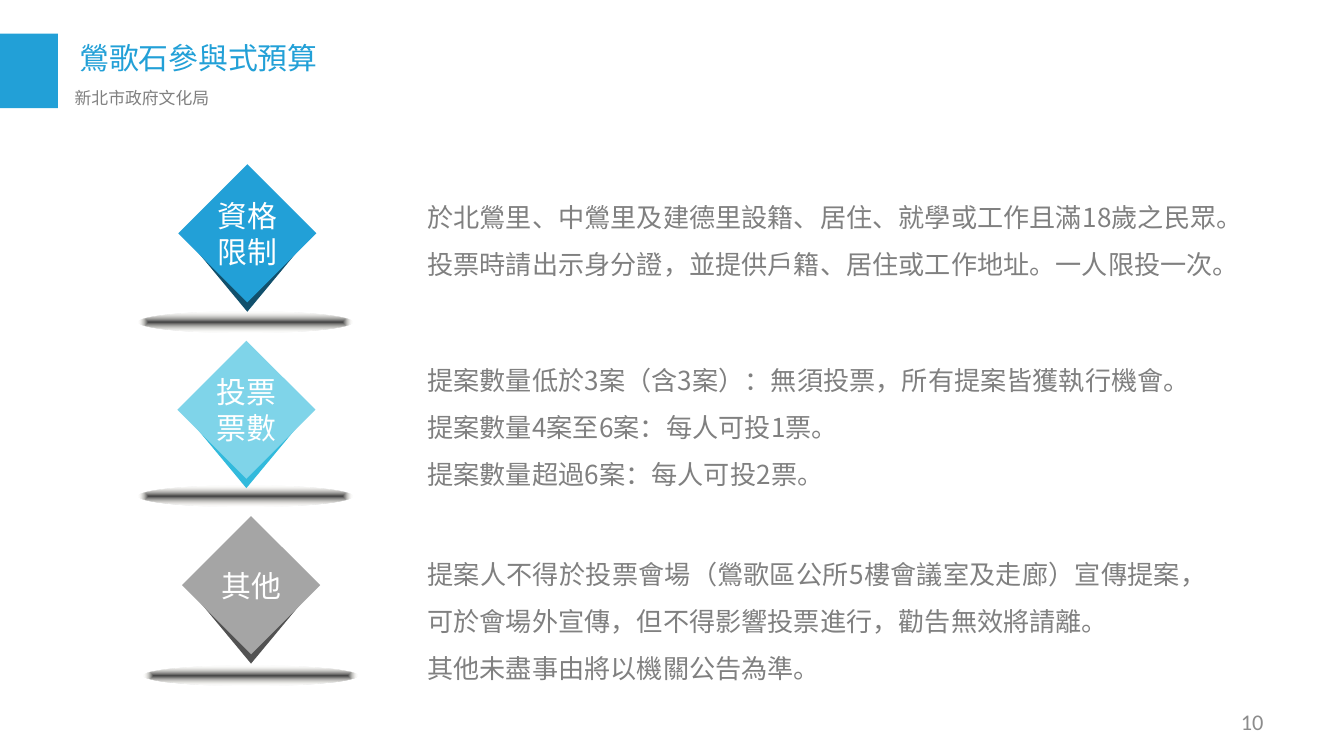
import pptx
import pptx.util
import pptx.dml.color
import pptx.enum.shapes
import pptx.enum.text
import pptx.oxml
import pptx.oxml.ns

Pt = pptx.util.Pt
ALIGN = pptx.enum.text.PP_ALIGN
ANCHOR = pptx.enum.text.MSO_ANCHOR
SHAPE = pptx.enum.shapes.MSO_SHAPE
CJK_FONT = "Noto Sans CJK SC"
GREY = "808080"
BLUE = "22A0D7"


def color(target, value):
    """Give a font or a fill a solid colour from a hex string."""
    if hasattr(target, "solid"):
        target.solid()
        target.fore_color.rgb = pptx.dml.color.RGBColor.from_string(value)
    else:
        target.color.rgb = pptx.dml.color.RGBColor.from_string(value)


def write(shape, *lines, size=14, font=CJK_FONT, ink=GREY, align=ALIGN.JUSTIFY,
          anchor=ANCHOR.TOP, spacing=1.0, inset=(8, 4)):
    """Write one paragraph per line, without bullets or indents."""
    frame = shape.text_frame
    frame.word_wrap = True
    frame.auto_size = pptx.enum.text.MSO_AUTO_SIZE.NONE
    frame.vertical_anchor = anchor
    frame.margin_left = frame.margin_right = Pt(inset[0])
    frame.margin_top = frame.margin_bottom = Pt(inset[1])
    frame.text = "\n".join(lines)
    for paragraph in frame.paragraphs:
        paragraph.alignment = align
        paragraph.line_spacing = spacing
        paragraph.space_before = paragraph.space_after = Pt(0)
        properties = paragraph._p.get_or_add_pPr()
        properties.set("marL", "0")
        properties.set("indent", "0")
        pptx.oxml.ns.qn("a:buNone")
        properties.append(pptx.oxml.parse_xml(
            f'<a:buNone {pptx.oxml.ns.nsdecls("a")}/>'))
        for run in paragraph.runs:
            run.font.size = Pt(size)
            run.font.bold = False
            run.font.name = font
            color(run.font, ink)
            run.font._element.find(pptx.oxml.ns.qn("a:latin")).addnext(
                pptx.oxml.parse_xml(f'<a:ea {pptx.oxml.ns.nsdecls("a")} '
                                    f'typeface="{CJK_FONT}"/>'))


presentation = pptx.Presentation()
presentation.slide_width = Pt(720)
presentation.slide_height = Pt(405)
# The comparison layout has a title and four body placeholders
slide = presentation.slides.add_slide(presentation.slide_layouts[4])
title, subtitle, *bodies = slide.placeholders

# Header
marker = slide.shapes.add_shape(SHAPE.RECTANGLE, 0, Pt(18), Pt(31), Pt(40))
marker.shadow.inherit = False
color(marker.fill, BLUE)
marker.line.fill.background()
for shape, text, box, size, font, ink in (
        (title, "鶯歌石參與式預算", (36.5, 18, 145, 25), 16, CJK_FONT, BLUE),
        (subtitle, "新北市政府文化局", (34, 44, 160, 17), 9, "Calibri", GREY)):
    shape.left, shape.top, shape.width, shape.height = map(Pt, box)
    write(shape, text, size=size, font=font, ink=ink, inset=(6, 3))

# Ground shadows fading from dark grey to transparent: left, top
for left, top in ((74, 167), (77, 356.5), (74, 260.5)):
    ground = slide.shapes.add_shape(SHAPE.OVAL, Pt(left), Pt(top), Pt(114.5), Pt(11))
    ground.shadow.inherit = False
    ground.line.fill.background()
    ground._element.spPr.find(pptx.oxml.ns.qn("a:prstGeom")).addnext(
        pptx.oxml.parse_xml(
            f'<a:gradFill {pptx.oxml.ns.nsdecls("a")} rotWithShape="1"><a:gsLst>'
            '<a:gs pos="0"><a:srgbClr val="404040"/></a:gs>'
            '<a:gs pos="100000"><a:srgbClr val="EEECE1"><a:alpha val="0"/></a:srgbClr></a:gs>'
            '</a:gsLst><a:path path="shape"><a:fillToRect l="50000" t="50000" '
            'r="50000" b="50000"/></a:path></a:gradFill>'))

# Sections: label, diamond left and top, front and back colour, body box, lines
sections = (
    ("資格限制", 95.5, 88, BLUE, "11506C", (95.5, 460, 59), ALIGN.LEFT,
     ("於北鶯里、中鶯里及建德里設籍、居住、就學或工作且滿18歲之民眾。",
      "投票時請出示身分證，並提供戶籍、居住或工作地址。一人限投一次。")),
    ("投票票數", 95, 182.5, "7FD4E9", "32BADC", (183, 433.5, 84), ALIGN.JUSTIFY,
     ("提案數量低於3案（含3案）：無須投票，所有提案皆獲執行機會。",
      "提案數量4案至6案：每人可投1票。",
      "提案數量超過6案：每人可投2票。")),
    ("其他", 97.5, 276.5, "A5A5A5", "525252", (286.5, 433.5, 109.5), ALIGN.JUSTIFY,
     ("提案人不得於投票會場（鶯歌區公所5樓會議室及走廊）宣傳提案，"
      "可於會場外宣傳，但不得影響投票進行，勸告無效將請離。",
      "其他未盡事由將以機關公告為準。")),
)
for body, section in zip(bodies, sections):
    label, left, top, front, back, (body_top, width, height), align, lines = section
    group = slide.shapes.add_group_shape()
    for offset_x, offset_y, diamond_width, fill in ((6.25, 5, 61.5, back), (0, 0, 74, front)):
        diamond = group.shapes.add_shape(SHAPE.DIAMOND, Pt(left + offset_x),
                                         Pt(top + offset_y), Pt(diamond_width), Pt(74))
        diamond.shadow.inherit = False
        color(diamond.fill, fill)
        diamond.line.fill.background()
    write(diamond, label, size=16, font="Roboto", ink="FFFFFF", align=ALIGN.CENTER,
          anchor=ANCHOR.MIDDLE, inset=(0, 0))
    body.left, body.top = Pt(221), Pt(body_top)
    body.width, body.height = Pt(width), Pt(height)
    write(body, *lines, align=align, spacing=1.5)

# Page number
number = slide.shapes.add_textbox(Pt(516), Pt(376), Pt(168), Pt(21.5))
write(number, "10", size=12, font="Calibri", ink="8C8C8C", align=ALIGN.RIGHT,
      anchor=ANCHOR.MIDDLE, inset=(7.2, 3.6))

presentation.save("out.pptx")
